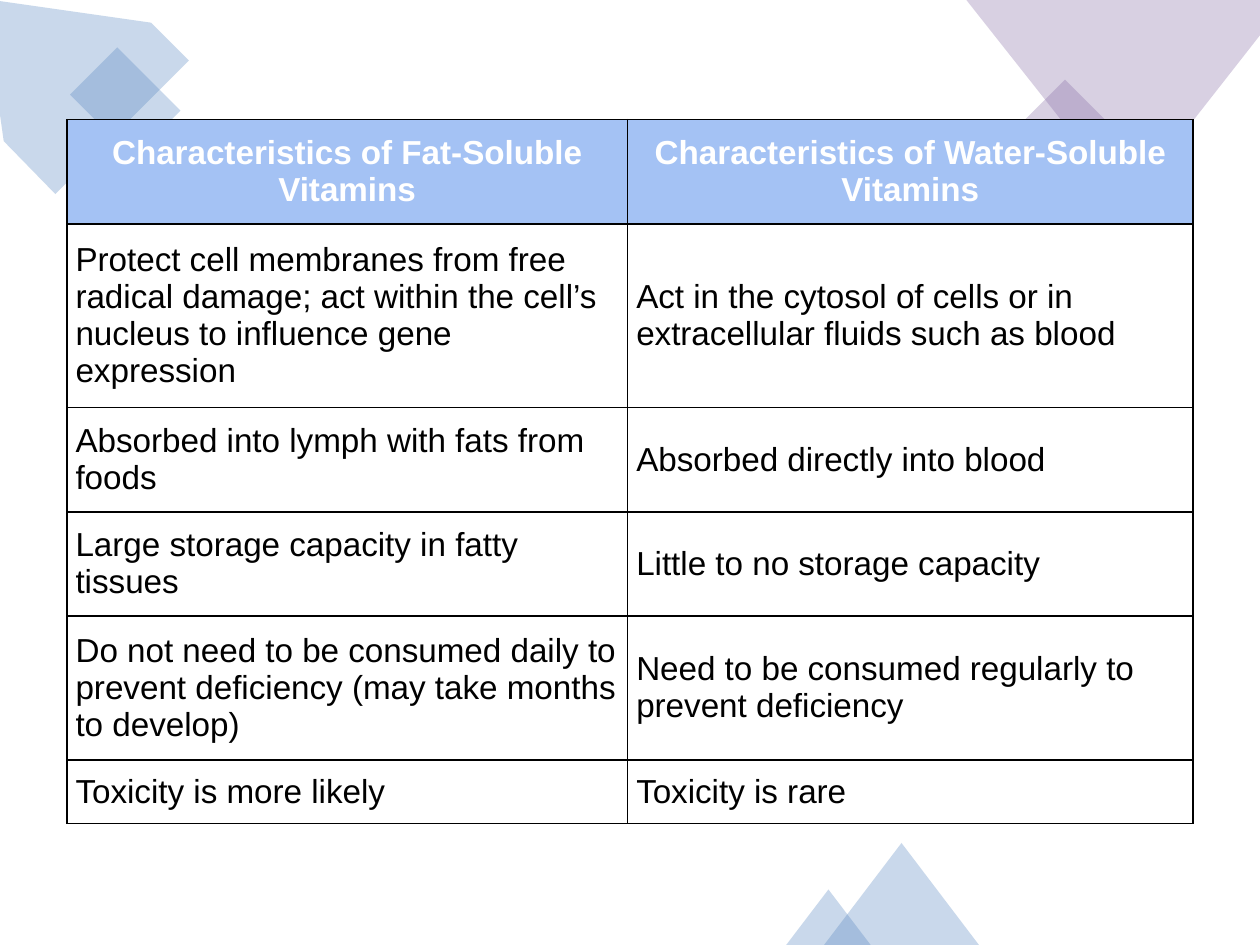
from lxml.etree import SubElement
from pptx import Presentation
from pptx.dml.color import RGBColor
from pptx.enum.shapes import MSO_SHAPE as Preset
from pptx.enum.text import MSO_ANCHOR as Anchor, PP_ALIGN as Align
from pptx.oxml import parse_xml
from pptx.oxml.ns import nsdecls, qn
from pptx.util import Inches, Pt

BLUE = RGBColor(0x4F, 0x81, 0xBD)
PURPLE = RGBColor(0x80, 0x64, 0xA2)
HEADER = RGBColor(0xA4, 0xC2, 0xF4)
WHITE = RGBColor(0xFF, 0xFF, 0xFF)
BLACK = RGBColor(0, 0, 0)

UNIT = Inches(0.1)
COLUMNS, ROWS = 100, 75

deck = Presentation()
deck.slide_width = COLUMNS * UNIT
deck.slide_height = ROWS * UNIT
slide = deck.slides.add_slide(deck.slide_layouts[6])


def grid(*cells):
    return [round(cell * UNIT) for cell in cells]


def tint(ornament, color):
    ornament.shadow.inherit = False
    ornament.line.fill.background()
    ornament.fill.solid()
    ornament.fill.fore_color.rgb = color
    shade = ornament.fill._xPr.find(qn("a:solidFill"))[0]
    SubElement(shade, qn("a:alpha")).set("val", "30000")


corner_left = [(12, 1.8), (-1.3, -0.1), (0.3, 11.2), (4.4, 15.4), (15, 4.8)]
corner_right = [(COLUMNS, 0), (76.7, 0), (89.5, 16.2), (COLUMNS, 2.8)]
ornaments = [
    (corner_left, BLUE),
    ((Preset.RECTANGLE, 7.3, 4.6, 5.3, 7.1, 315), BLUE),
    ((Preset.RECTANGLE, 82.4, 7.2, 5.6, 7.5, 315), PURPLE),
    (corner_right, PURPLE),
    ((Preset.ISOSCELES_TRIANGLE, 65.4, 66.9, 12.3, 8.1, 0), BLUE),
    ((Preset.ISOSCELES_TRIANGLE, 62.4, 70.6, 6.7, 4.4, 0), BLUE),
]
for outline, color in ornaments:
    if isinstance(outline, list):
        start, *corners = [grid(*point) for point in outline]
        builder = slide.shapes.build_freeform(*start)
        builder.add_line_segments(corners, close=True)
        ornament = builder.convert_to_shape()
    else:
        preset, *box, angle = outline
        ornament = slide.shapes.add_shape(preset, *grid(*box))
        ornament.rotation = angle
    tint(ornament, color)

characteristics = [
    ("Characteristics of Fat-Soluble Vitamins",
     "Characteristics of Water-Soluble Vitamins"),
    ("Protect cell membranes from free radical damage; act within the cell’s "
     "nucleus to influence gene expression",
     "Act in the cytosol of cells or in extracellular fluids such as blood"),
    ("Absorbed into lymph with fats from foods",
     "Absorbed directly into blood"),
    ("Large storage capacity in fatty tissues",
     "Little to no storage capacity"),
    ("Do not need to be consumed daily to prevent deficiency "
     "(may take months to develop)",
     "Need to be consumed regularly to prevent deficiency"),
    ("Toxicity is more likely", "Toxicity is rare"),
]
widths = grid(44.5, 44.9)
heights = grid(8.26, 14.6, 8.26, 8.26, 11.44, 5.06)

vitamins = slide.shapes.add_table(
    len(heights), len(widths), *grid(5.3, 9.5), sum(widths), sum(heights)
).table
vitamins.first_row = vitamins.horz_banding = False
for column, width in zip(vitamins.columns, widths):
    column.width = width
for row, height in zip(vitamins.rows, heights):
    row.height = height

for r, pair in enumerate(characteristics):
    heading = r == 0
    for c, wording in enumerate(pair):
        cell = vitamins.cell(r, c)
        cell.vertical_anchor = Anchor.MIDDLE
        cell.margin_left = cell.margin_right = Inches(0.07)
        cell.margin_top = cell.margin_bottom = Inches(0.07)
        if heading:
            cell.fill.solid()
            cell.fill.fore_color.rgb = HEADER
        else:
            cell.fill.background()
        for position, side in enumerate(("lnL", "lnR", "lnT", "lnB")):
            border = parse_xml(
                f'<a:{side} {nsdecls("a")} w="{Pt(1)}"><a:solidFill>'
                f'<a:srgbClr val="{BLACK}"/></a:solidFill></a:{side}>'
            )
            cell._tc.get_or_add_tcPr().insert(position, border)
        paragraph = cell.text_frame.paragraphs[0]
        paragraph.alignment = Align.CENTER if heading else Align.LEFT
        run = paragraph.add_run()
        run.text = wording
        run.font.name = "Arial"
        run.font.size = Pt(19)
        run.font.bold = heading
        run.font.color.rgb = WHITE if heading else BLACK

deck.save("out.pptx")
